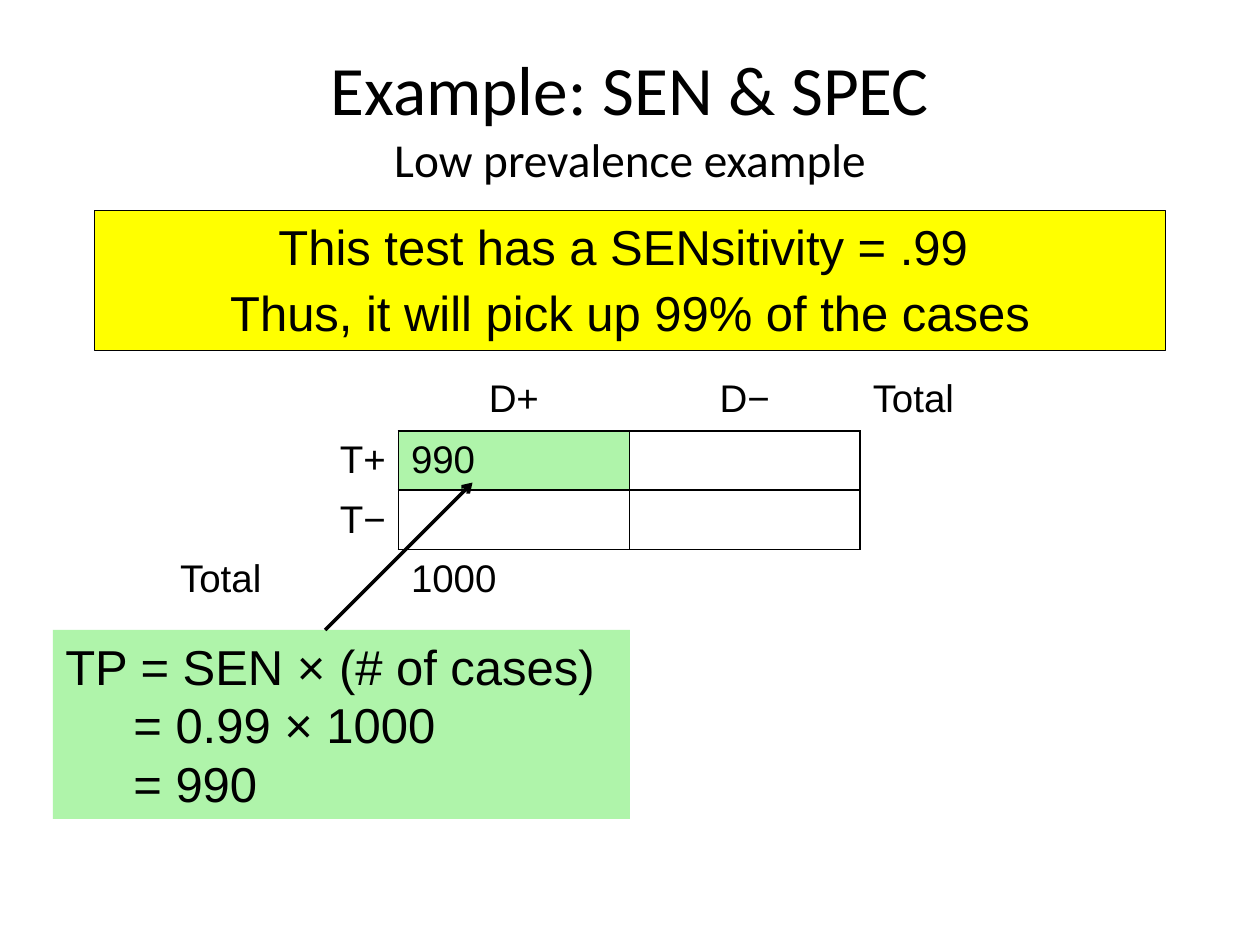
from lxml.etree import SubElement
from pptx import Presentation
from pptx.dml.color import RGBColor
from pptx.enum.shapes import MSO_CONNECTOR, MSO_SHAPE
from pptx.enum.text import MSO_ANCHOR, PP_ALIGN
from pptx.oxml import parse_xml
from pptx.oxml.ns import nsdecls, qn
from pptx.util import Inches, Pt

BLACK, GREEN, YELLOW = "000000", "AFF4AA", "FFFF00"
NO_GRID_STYLE = "{2D5ABB26-0587-4C30-8999-92F81FD0307C}"
LEFT, CENTER, RIGHT = PP_ALIGN.LEFT, PP_ALIGN.CENTER, PP_ALIGN.RIGHT


def color(value):
    """Turn a hex string into a colour."""
    return RGBColor.from_string(value)


def add_run(paragraph, text, size, font="Arial"):
    """Append one black run to a paragraph."""
    run = paragraph.add_run()
    run.text = text
    run.font.size = Pt(size)
    run.font.name = font
    run.font.color.rgb = color(BLACK)


def add_panel(slide, box, fill):
    """Add a filled rectangle without shadow or line."""
    shape = slide.shapes.add_shape(MSO_SHAPE.RECTANGLE, *map(Inches, box))
    shape.shadow.inherit = False
    shape.fill.solid()
    shape.fill.fore_color.rgb = color(fill)
    shape.line.fill.background()
    shape.text_frame.word_wrap = True
    return shape


def add_title(slide, box):
    """Place the title and its smaller second line."""
    frame = slide.shapes.add_textbox(*map(Inches, box)).text_frame
    frame.word_wrap = True
    frame.vertical_anchor = MSO_ANCHOR.MIDDLE
    paragraph = frame.paragraphs[0]
    paragraph.alignment = CENTER
    add_run(paragraph, "Example: SEN & SPEC", 39.6, "Calibri")
    paragraph.add_line_break()
    add_run(paragraph, "Low prevalence example", 27, "Calibri")


def add_statement(slide, box):
    """Place the outlined yellow statement about sensitivity."""
    shape = add_panel(slide, box, YELLOW)
    shape.line.color.rgb = color(BLACK)
    shape.line.width = Pt(0.75)
    frame = shape.text_frame
    frame.vertical_anchor = MSO_ANCHOR.TOP
    lines = ("This test has a SENsitivity = .99 ", "Thus, it will pick up 99% of the cases")
    for index, line in enumerate(lines):
        paragraph = frame.add_paragraph() if index else frame.paragraphs[0]
        paragraph.alignment = CENTER
        paragraph.space_before = Pt(4.2)
        add_run(paragraph, line, 28)


def add_borders(cell, sides):
    """Draw the named sides of a cell as thin black lines."""
    properties = cell._tc.get_or_add_tcPr()
    for index, side in enumerate(sides):
        properties.insert(index, parse_xml(
            f'<a:ln{side} {nsdecls("a")} w="12700"><a:solidFill>'
            f'<a:srgbClr val="{BLACK}"/></a:solidFill></a:ln{side}>'))


def add_contingency_table(slide, box):
    """Place the test by disease table with its framed two by two core."""
    rows = [["", "D+", "D−", "Total"], ["T+", "990", "", ""],
            ["T−", "", "", ""], ["Total", "1000", "", ""]]
    alignments = {"D+": CENTER, "D−": CENTER, "T+": RIGHT, "T−": RIGHT}
    core = {(row, column) for row in (1, 2) for column in (1, 2)}
    neighbours = {"L": (0, -1), "R": (0, 1), "T": (-1, 0), "B": (1, 0)}
    frame = slide.shapes.add_table(len(rows), len(rows[0]), *map(Inches, box))
    table = frame.table
    table.first_row = table.horz_banding = False
    table._tbl.tblPr.find(qn("a:tableStyleId")).text = NO_GRID_STYLE
    for row, texts in enumerate(rows):
        table.rows[row].height = Inches(0.47 if row else 0.5)
        for column, text in enumerate(texts):
            cell = table.cell(row, column)
            cell.vertical_anchor = MSO_ANCHOR.MIDDLE
            if text == "990":
                cell.fill.solid()
                cell.fill.fore_color.rgb = color(GREEN)
            else:
                cell.fill.background()
            add_borders(cell, [side for side, (down, across) in neighbours.items()
                               if (row, column) in core or (row + down, column + across) in core])
            if text:
                paragraph = cell.text_frame.paragraphs[0]
                paragraph.alignment = alignments.get(text, LEFT)
                paragraph.space_before = Pt(4.4)
                add_run(paragraph, text, 22)


def add_calculation(slide, box):
    """Place the green box that works out the true positives."""
    frame = add_panel(slide, box, GREEN).text_frame
    frame.vertical_anchor = MSO_ANCHOR.TOP
    formula, steps = frame.paragraphs[0], frame.add_paragraph()
    formula.alignment = steps.alignment = LEFT
    add_run(formula, "TP = SEN × (# of cases)", 28)
    steps._p.get_or_add_pPr().set("marL", str(Inches(0.54)))
    add_run(steps, "= 0.99 × 1000", 28)
    steps.add_line_break()
    add_run(steps, "= 990", 28)


def add_arrow(slide, start, end):
    """Draw the arrow from the calculation to its table cell."""
    arrow = slide.shapes.add_connector(MSO_CONNECTOR.STRAIGHT, *map(Inches, start + end))
    arrow.line.color.rgb = color(BLACK)
    arrow.line.width = Pt(2)
    SubElement(arrow.line._get_or_add_ln(), qn("a:tailEnd"), type="arrow")
    SubElement(arrow._element.spPr, qn("a:effectLst"))


def main():
    """Build and save the slide."""
    presentation = Presentation()
    presentation.slide_width, presentation.slide_height = Inches(10), Inches(7.5)
    slide = presentation.slides.add_slide(presentation.slide_layouts[6])
    add_title(slide, (0.5, 0.3, 9, 1.25))
    add_contingency_table(slide, (1.33, 2.92, 7.33, 1.9))
    add_calculation(slide, (0.42, 5, 4.58, 1.5))
    add_statement(slide, (0.75, 1.67, 8.5, 1.11))
    add_arrow(slide, (2.58, 5), (3.75, 3.83))
    presentation.save("out.pptx")


if __name__ == "__main__":
    main()
